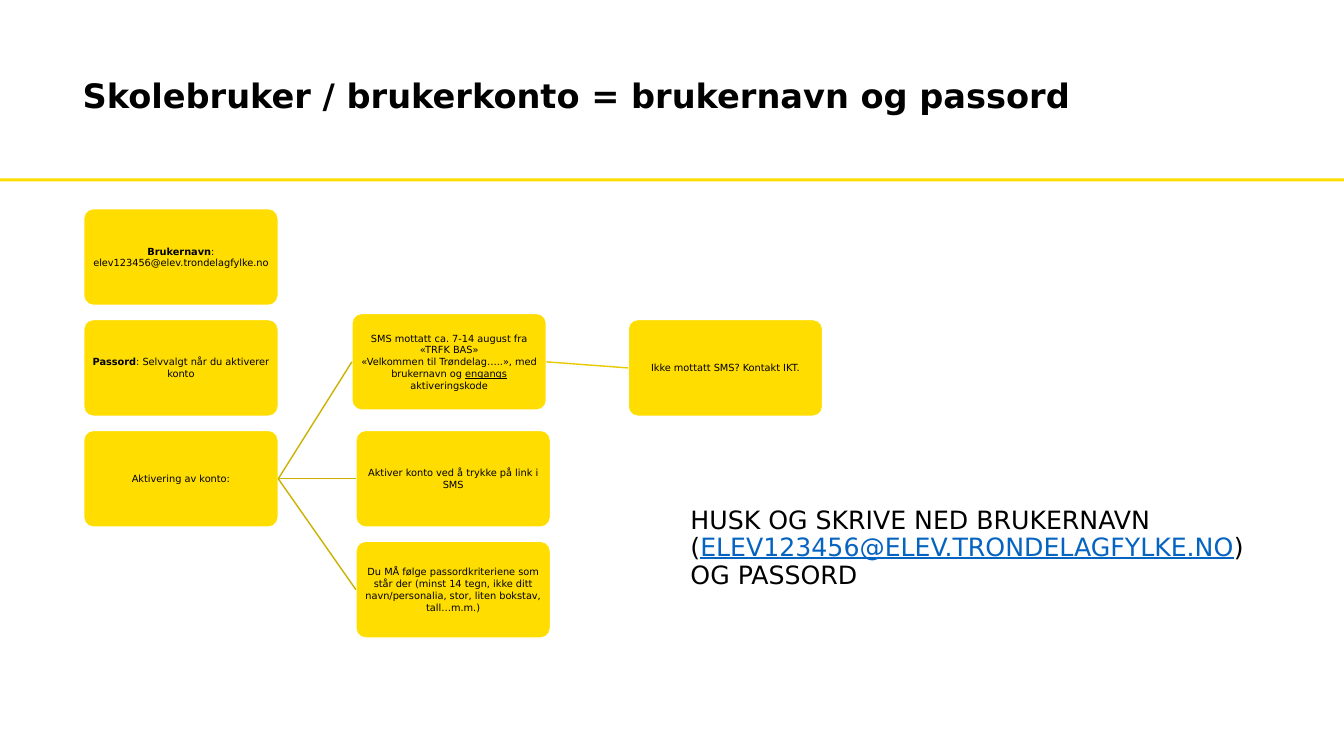
from dataclasses import dataclass

from lxml.etree import SubElement
from pptx import Presentation
from pptx.dml.color import RGBColor as RGB
from pptx.enum.shapes import MSO_CONNECTOR as LINK, MSO_SHAPE as SHAPE
from pptx.enum.text import MSO_ANCHOR as ANCHOR, PP_ALIGN as ALIGN
from pptx.oxml.ns import qn
from pptx.util import Inches, Pt


@dataclass(frozen=True)
class Theme:
    font: str = "DejaVu Sans"
    black: RGB = RGB.from_string("000000")
    white: RGB = RGB.from_string("FFFFFF")
    yellow: RGB = RGB.from_string("FFDD00")
    ochre: RGB = RGB.from_string("CCB100")
    gold: RGB = RGB.from_string("E7C900")
    blue: RGB = RGB.from_string("0563C1")
    title: int = 24
    note: int = 18
    small: int = 7


THEME = Theme()
LEFT, TOP = 0.83, 2.07
STEP_X, STEP_Y = 2.7, 1.1
BOX_W, BOX_H = 1.93, 0.96
LEFT_SITE, RIGHT_SITE = 1, 3


def style(run, size, bold=False, under=False, color=THEME.black):
    font = run.font
    font.name, font.size = THEME.font, Pt(size)
    font.bold, font.underline = bold, under
    font.color.rgb = color


def write(para, size, parts):
    """Fill a paragraph from (text, style options) pairs."""
    for text, opts in parts:
        start = len(para.runs)
        if start:
            para.add_run().text = text
        else:
            para.text = text
        for run in para.runs[start:]:
            style(run, size, **opts)
    for brk in para._p.findall(qn("a:br")):
        SubElement(brk, qn("a:rPr"), sz=str(size * 100))


def set_frame(frame, margin=0):
    frame.word_wrap = True
    frame.margin_left = frame.margin_right = Inches(margin)
    frame.margin_top = frame.margin_bottom = Inches(margin / 2)


def add_text(slide, x, y, w, h, size, parts, anchor, margin=0):
    box = slide.shapes.add_textbox(Inches(x), Inches(y), Inches(w), Inches(h))
    frame = box.text_frame
    set_frame(frame, margin)
    frame.vertical_anchor = anchor
    para = frame.paragraphs[0]
    para.line_spacing = 0.9
    write(para, size, parts)


def add_rule(slide, width):
    rule = slide.shapes.add_shape(
        SHAPE.RECTANGLE, 0, Inches(1.77), width, Inches(0.03))
    rule.shadow.inherit = False
    rule.fill.solid()
    rule.fill.fore_color.rgb = THEME.yellow
    rule.line.fill.background()


def add_box(slide, col, row, parts, dx=0, dy=0):
    """Place a yellow box on the grid, nudged by dx and dy."""
    box = slide.shapes.add_shape(
        SHAPE.ROUNDED_RECTANGLE,
        Inches(LEFT + col * STEP_X + dx), Inches(TOP + row * STEP_Y + dy),
        Inches(BOX_W), Inches(BOX_H))
    box.adjustments[0] = 0.1
    box.shadow.inherit = False
    box.fill.solid()
    box.fill.fore_color.rgb = THEME.yellow
    box.line.color.rgb = THEME.white
    box.line.width = Pt(1)
    frame = box.text_frame
    set_frame(frame)
    frame.vertical_anchor = ANCHOR.MIDDLE
    para = frame.paragraphs[0]
    para.alignment = ALIGN.CENTER
    write(para, THEME.small, parts)
    return box


def join(slide, start, end, color):
    line = slide.shapes.add_connector(LINK.STRAIGHT, 0, 0, 0, 0)
    line.begin_connect(start, RIGHT_SITE)
    line.end_connect(end, LEFT_SITE)
    line.line.color.rgb = color
    line.line.width = Pt(1)
    SubElement(line._element.spPr, qn("a:effectLst"))


def add_flow(slide):
    bold, under = {"bold": True}, {"under": True}
    add_box(slide, 0, 0, [
        ("Brukernavn", bold), (": elev123456@elev.trondelagfylke.no", {})])
    add_box(slide, 0, 1, [
        ("Passord", bold), (": Selvvalgt når du aktiverer konto", {})])
    start = add_box(slide, 0, 2, [("Aktivering av konto:", {})])
    sms = add_box(slide, 1, 1, [
        ("SMS mottatt ca. 7-14 august fra «TRFK BAS»\n"
         "«Velkommen til Trøndelag…..», med brukernavn og ", {}),
        ("engangs", under), (" aktiveringskode", {})], dx=-0.04, dy=-0.06)
    click = add_box(slide, 1, 2, [
        ("Aktiver konto ved å trykke på link i SMS", {})])
    rules = add_box(slide, 1, 3, [
        ("Du MÅ følge passordkriteriene som står der (minst 14 tegn, ikke "
         "ditt navn/personalia, stor, liten bokstav, tall…m.m.)", {})])
    contact = add_box(slide, 2, 1, [("Ikke mottatt SMS? Kontakt IKT.", {})])
    for step in (sms, click, rules):
        join(slide, start, step, THEME.ochre)
    join(slide, sms, contact, THEME.gold)


def main():
    prs = Presentation()
    prs.slide_width, prs.slide_height = Inches(13.33), Inches(7.5)
    slide = prs.slides.add_slide(prs.slide_layouts[6])
    add_rule(slide, prs.slide_width)
    add_text(slide, 0.82, 0.36, 10.5, 1.21, THEME.title, [
        ("Skolebruker / brukerkonto = brukernavn og passord",
         {"bold": True})], ANCHOR.MIDDLE)
    add_flow(slide)
    add_text(slide, 6.75, 4.99, 5.76, 1.96, THEME.note, [
        ("HUSK OG SKRIVE NED BRUKERNAVN (", {}),
        ("ELEV123456@ELEV.TRONDELAGFYLKE.NO",
         {"under": True, "color": THEME.blue}),
        (") OG PASSORD", {})], ANCHOR.TOP, margin=0.1)
    prs.save("out.pptx")


if __name__ == "__main__":
    main()
